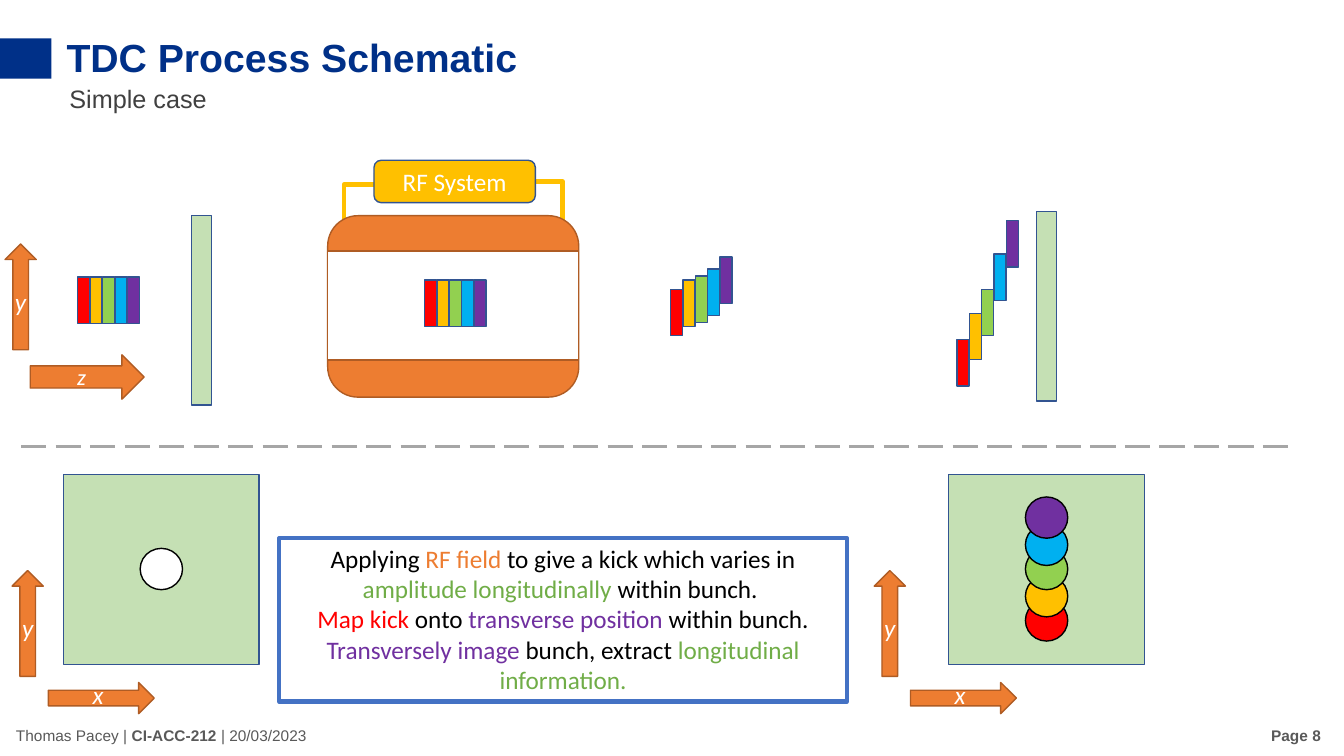
"""Build the slide that explains the TDC process with a simple case."""
import pptx
import pptx.dml.color
import pptx.enum.dml
import pptx.enum.shapes
import pptx.enum.text
import pptx.oxml
import pptx.util

Inches = pptx.util.Inches
RGBColor = pptx.dml.color.RGBColor
SHAPE = pptx.enum.shapes.MSO_SHAPE
ALIGN = pptx.enum.text.PP_ALIGN
ANCHOR = pptx.enum.text.MSO_ANCHOR

NAVY = RGBColor(0x00, 0x30, 0x88)
EDGE_BLUE = RGBColor(0x32, 0x54, 0x91)
FRAME_BLUE = RGBColor(0x44, 0x72, 0xC4)
ORANGE = RGBColor(0xED, 0x7D, 0x31)
EDGE_ORANGE = RGBColor(0xAF, 0x5C, 0x24)
SCREEN_GREEN = RGBColor(0xC5, 0xE0, 0xB4)
TEXT_GREEN = RGBColor(0x70, 0xAD, 0x47)
RED = RGBColor(0xFF, 0x00, 0x00)
GOLD = RGBColor(0xFF, 0xC0, 0x00)
LIME = RGBColor(0x92, 0xD0, 0x50)
SKY = RGBColor(0x00, 0xB0, 0xF0)
PURPLE = RGBColor(0x70, 0x30, 0xA0)
WHITE = RGBColor(0xFF, 0xFF, 0xFF)
BLACK = RGBColor(0x00, 0x00, 0x00)
FOOTER_GREY = RGBColor(0x59, 0x59, 0x59)
SUBTITLE_GREY = RGBColor(0x40, 0x40, 0x40)
DASH_GREY = RGBColor(0xA6, 0xA6, 0xA6)

SLICE_COLOURS = (RED, GOLD, LIME, SKY, PURPLE)
FOOTER = {"name": "Arial", "size": pptx.util.Pt(11)}
BODY = {"name": "Calibri", "size": pptx.util.Pt(18)}
AXIS = {**BODY, "italic": True}
MESSAGE = (
    (("Applying ", BLACK), ("RF field ", ORANGE),
     ("to give a kick which varies in ", BLACK),
     ("amplitude longitudinally", TEXT_GREEN), (" within bunch. ", BLACK)),
    (("Map kick ", RED), ("onto ", BLACK),
     ("transverse position ", PURPLE), ("within bunch.", BLACK)),
    (("Transversely image ", PURPLE), ("bunch, extract ", BLACK),
     ("longitudinal information.", TEXT_GREEN)),
)


def add_span(para, text, colour, formats):
    """Append one formatted run to a paragraph."""
    span = para.add_run()
    span.text = text
    span.font.color.rgb = colour
    for name, value in formats.items():
        setattr(span.font, name, value)


def set_frame(shape, **formats):
    """Set text frame properties and return the first paragraph."""
    for name, value in {"word_wrap": True, **formats}.items():
        setattr(shape.text_frame, name, value)
    return shape.text_frame.paragraphs[0]


def add_text(page, area, text, colour, formats, anchor=ANCHOR.TOP):
    """Add a text box with one run and return its paragraph."""
    box = page.shapes.add_textbox(*map(Inches, area))
    para = set_frame(box, vertical_anchor=anchor)
    add_span(para, text, colour, formats)
    return para


def style_shape(shape, fill, edge, width=1):
    """Give a shape its fill and outline, with None for neither."""
    shape.shadow.inherit = False
    for target, colour in ((shape.fill, fill), (shape.line.fill, edge)):
        if colour is None:
            target.background()
        else:
            target.solid()
            target.fore_color.rgb = colour
    if edge is not None:
        shape.line.width = pptx.util.Pt(width)


def add_block(page, kind, area, fill, edge=EDGE_BLUE, width=1):
    """Add a filled preset shape."""
    shape = page.shapes.add_shape(kind, *map(Inches, area))
    style_shape(shape, fill, edge, width)
    return shape


def add_bunch(page, left, tops):
    """Add the five coloured slices of a bunch, side by side."""
    for index, (top, colour) in enumerate(zip(tops, SLICE_COLOURS)):
        area = (left + index * 0.123, top, 0.12, 0.46)
        add_block(page, SHAPE.RECTANGLE, area, colour)


def add_screen(page, left, spots):
    """Add a front view of a screen with beam spots at given heights."""
    add_block(page, SHAPE.RECTANGLE, (left, 4.71, 1.94, 1.88), SCREEN_GREEN)
    for top, colour in spots:
        area = (left + 0.76, top, 0.42, 0.41)
        add_block(page, SHAPE.OVAL, area, colour, BLACK)


def add_y_axis(page, left, top):
    """Add an upward arrow marked y."""
    add_block(page, SHAPE.UP_ARROW, (left, top, 0.31, 1.05), ORANGE, EDGE_ORANGE)
    add_text(page, (left, top + 0.37, 0.29, 0.4), "y", WHITE, AXIS)


def add_x_axis(page, left):
    """Add a rightward arrow marked x."""
    area = (left, 6.77, 1.05, 0.31)
    add_block(page, SHAPE.RIGHT_ARROW, area, ORANGE, EDGE_ORANGE)
    add_text(page, (left + 0.34, 6.69, 0.25, 0.4), "x", WHITE, AXIS)


def add_feed(page, points):
    """Add a bent line that joins the RF system to the cavity."""
    start, *rest = [tuple(map(Inches, point)) for point in points]
    builder = page.shapes.build_freeform(*start)
    builder.add_line_segments(rest, close=False)
    style_shape(builder.convert_to_shape(), None, GOLD, 3)


def add_divider(page):
    """Add the dashed line between the side and front views."""
    line = page.shapes.add_connector(
        pptx.enum.shapes.MSO_CONNECTOR.STRAIGHT,
        *map(Inches, (0.21, 4.43, 12.8, 4.43)))
    line.line.color.rgb = DASH_GREY
    line.line.width = pptx.util.Pt(2.25)
    line.line.dash_style = pptx.enum.dml.MSO_LINE.LONG_DASH
    properties = line._element.spPr
    properties.append(pptx.oxml.parse_xml(
        '<a:effectLst xmlns:a='
        '"http://schemas.openxmlformats.org/drawingml/2006/main"/>'))


def add_heading(page):
    """Fill the title and add its marker, subtitle and footer."""
    title = page.shapes.title
    for name, value in zip(("left", "top", "width", "height"),
                           (0.56, 0.28, 4.83, 0.57)):
        setattr(title, name, Inches(value))
    para = set_frame(title, word_wrap=False, vertical_anchor=ANCHOR.TOP,
                     auto_size=pptx.enum.text.MSO_AUTO_SIZE.NONE)
    para.alignment = ALIGN.LEFT
    add_span(para, "TDC Process Schematic", NAVY,
             {"name": "Arial", "size": pptx.util.Pt(28), "bold": True})
    add_block(page, SHAPE.RECTANGLE, (0, 0.38, 0.51, 0.4), NAVY, None)
    add_text(page, (0.59, 0.78, 6.11, 0.4), "Simple case", SUBTITLE_GREY,
             {**BODY, "name": "Arial"})
    credit = add_text(page, (0.06, 7.1, 4.05, 0.4), "Thomas Pacey | ",
                      FOOTER_GREY, FOOTER, ANCHOR.MIDDLE)
    add_span(credit, "CI-ACC-212 ", FOOTER_GREY, {**FOOTER, "bold": True})
    add_span(credit, "| 20/03/2023", FOOTER_GREY, FOOTER)
    number = add_text(page, (10.2, 7.1, 3, 0.4), "Page 8", FOOTER_GREY,
                      {**FOOTER, "bold": True}, ANCHOR.MIDDLE)
    number.alignment = ALIGN.RIGHT


def add_label(shape, text, formats):
    """Centre white text in a shape."""
    para = set_frame(shape, vertical_anchor=ANCHOR.MIDDLE)
    para.alignment = ALIGN.CENTER
    add_span(para, text, WHITE, formats)


def add_cavity(page):
    """Add the cavity with its RF system and the bunch inside."""
    add_feed(page, ((3.71, 1.83), (3.41, 1.83), (3.41, 2.22)))
    add_feed(page, ((5.31, 1.8), (5.58, 1.8), (5.58, 2.24)))
    add_block(page, SHAPE.ROUNDED_RECTANGLE, (3.25, 2.14, 2.49, 1.8),
              ORANGE, EDGE_ORANGE)
    add_block(page, SHAPE.RECTANGLE, (3.25, 2.49, 2.49, 1.08), WHITE, EDGE_ORANGE)
    add_bunch(page, 4.21, [2.78] * 5)
    system = add_block(page, SHAPE.ROUNDED_RECTANGLE, (3.71, 1.59, 1.6, 0.42), GOLD)
    add_label(system, "RF System", BODY)


def add_message(page):
    """Add the framed explanation with its coloured key words."""
    box = add_block(page, SHAPE.RECTANGLE, (2.77, 5.34, 5.63, 1.62),
                    None, FRAME_BLUE, 3)
    para = set_frame(box, vertical_anchor=ANCHOR.TOP)
    for index, spans in enumerate(MESSAGE):
        if index:
            para = box.text_frame.add_paragraph()
        para.alignment = ALIGN.CENTER
        for text, colour in spans:
            add_span(para, text, colour, BODY)


def main():
    """Build and save the deck."""
    deck = pptx.Presentation()
    deck.slide_width, deck.slide_height = Inches(13.33), Inches(7.5)
    page = deck.slides.add_slide(deck.slide_layouts.get_by_name("Title Only"))
    add_heading(page)
    for left, top in ((1.9, 2.14), (10.28, 2.1)):
        add_block(page, SHAPE.RECTANGLE, (left, top, 0.2, 1.88), SCREEN_GREEN)
    add_screen(page, 0.63, [(5.44, WHITE)])
    add_screen(page, 9.41, zip((5.95, 5.71, 5.44, 5.2, 4.93), SLICE_COLOURS))
    add_bunch(page, 0.77, [2.75] * 5)
    add_bunch(page, 6.65, (2.87, 2.78, 2.74, 2.67, 2.55))
    add_bunch(page, 9.49, (3.37, 3.11, 2.87, 2.52, 2.19))
    z_axis = add_block(page, SHAPE.RIGHT_ARROW, (0.3, 3.52, 1.13, 0.44),
                       ORANGE, EDGE_ORANGE)
    add_label(z_axis, "z", {**AXIS, "size": pptx.util.Pt(16)})
    for left, top in ((0.05, 2.42), (0.12, 5.66), (8.67, 5.66)):
        add_y_axis(page, left, top)
    for left in (0.48, 9.03):
        add_x_axis(page, left)
    add_divider(page)
    add_message(page)
    add_cavity(page)
    deck.save("out.pptx")


if __name__ == "__main__":
    main()
